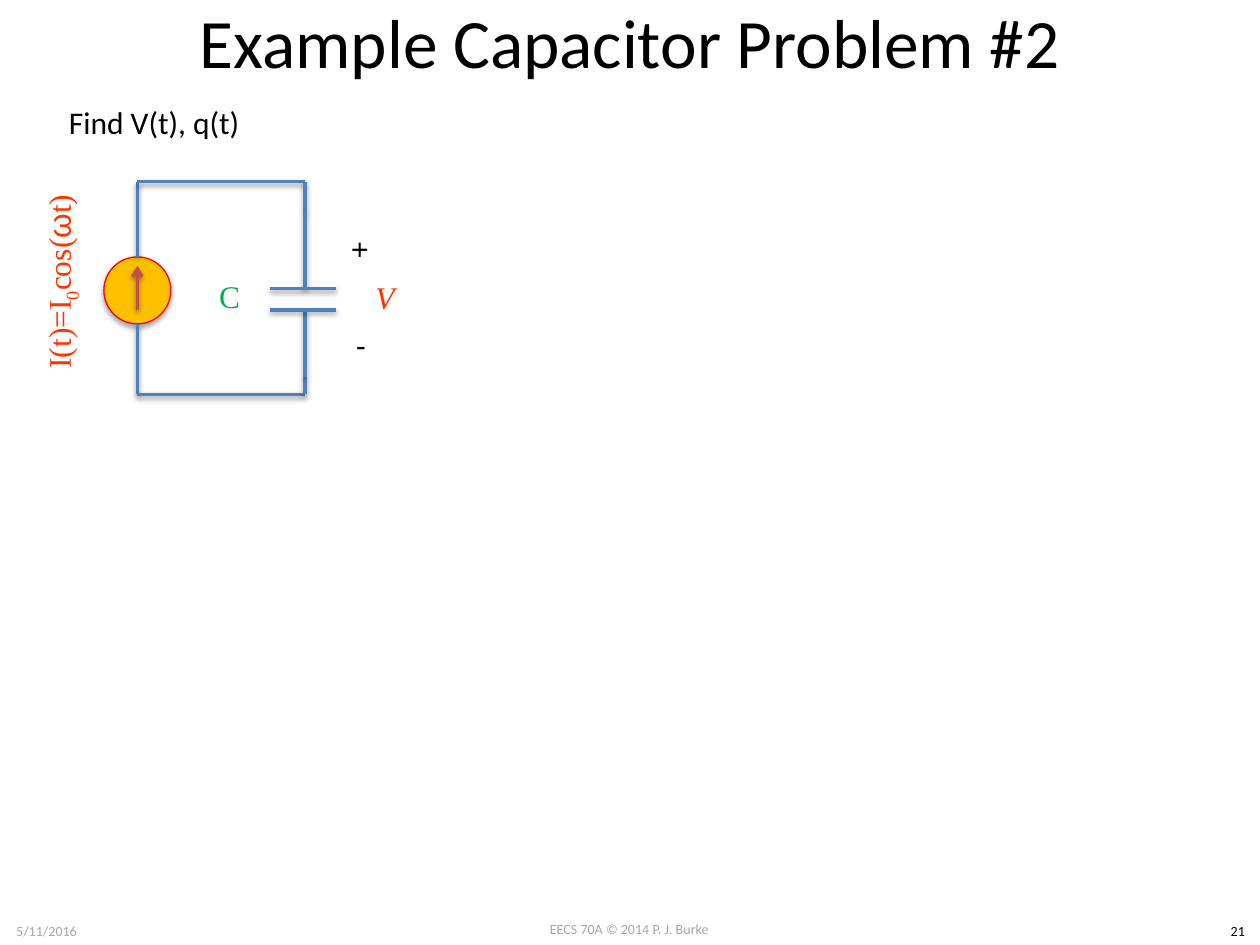
from lxml import etree
from pptx import Presentation
from pptx.dml.color import RGBColor
from pptx.enum.shapes import MSO_CONNECTOR, MSO_SHAPE
from pptx.enum.text import MSO_ANCHOR, PP_ALIGN
from pptx.oxml.ns import qn
from pptx.util import Cm, Pt

LEFT, CENTER = PP_ALIGN.LEFT, PP_ALIGN.CENTER
TOP, MIDDLE = MSO_ANCHOR.TOP, MSO_ANCHOR.MIDDLE
STRAIGHT, OVAL = MSO_CONNECTOR.STRAIGHT, MSO_SHAPE.OVAL

BLACK = RGBColor(0x00, 0x00, 0x00)
GRAY = RGBColor(0xA6, 0xA6, 0xA6)
BLUE = RGBColor(0x4F, 0x81, 0xBD)
BRICK = RGBColor(0xC0, 0x50, 0x4D)
RED = RGBColor(0xFF, 0x00, 0x00)
ORANGE = RGBColor(0xFF, 0x33, 0x00)
AMBER = RGBColor(0xFF, 0xC0, 0x00)
GREEN = RGBColor(0x00, 0xB0, 0x50)

SERIF = "Times New Roman"
FOOTER = dict(size=8, align=CENTER)
SYMBOL = dict(font=SERIF, align=CENTER, anchor=MIDDLE, wrap=True)

TEXTS = [
    ("EECS 70A © 2014 P. J. Burke", (9.73, 18.44, 5.92, 0.61), dict(FOOTER, color=GRAY)),
    ("5/11/2016", (0, 18.47, 1.88, 0.61), dict(FOOTER, color=GRAY)),
    ("21", (24.51, 18.47, 0.89, 0.61), FOOTER),
    ("Example Capacitor Problem #2", (1.27, 0, 22.86, 1.65),
     dict(size=39.6, align=CENTER, anchor=MIDDLE, wrap=True)),
    ("Find V(t), q(t)", (1.14, 1.96, 3.99, 1.02), {}),
    ("C", (3.12, 5.05, 3.02, 1.85), dict(SYMBOL, color=GREEN)),
    ("+", (6.88, 4.55, 0.84, 1.02), dict(rotation=90)),
    ("-", (6.93, 6.45, 0.71, 1.02), {}),
    ("V", (6.78, 5.21, 1.96, 1.55), dict(SYMBOL, color=ORANGE, italic=True)),
    (["I(t)=I", ("0", {"baseline": "-25000"}), "cos(", ("ω", {"font": "Arial"}), "t)"],
     (-1.45, 4.9, 5.36, 1.55), dict(SYMBOL, color=ORANGE, rotation=270)),
]

SOURCE_X, CAP_X = 2.77, 6.15
TOP_Y, BOTTOM_Y = 3.66, 7.95
SOURCE_Y, SOURCE_D = 5.18, 1.35
PLATE_YS, PLATE_LEFT, PLATE_RIGHT = (5.82, 6.25), 5.44, 6.78
LEAD_YS = (4.24, 7.59)

WIRES = [
    (SOURCE_X, SOURCE_Y, SOURCE_X, TOP_Y),
    (SOURCE_X, SOURCE_Y + SOURCE_D, SOURCE_X, BOTTOM_Y),
]
for rail_y, lead_y, plate_y in zip((TOP_Y, BOTTOM_Y), LEAD_YS, PLATE_YS):
    WIRES += [
        (SOURCE_X, rail_y, CAP_X, rail_y),
        (CAP_X, rail_y, CAP_X, lead_y),
        (CAP_X, lead_y, CAP_X, plate_y),
        (PLATE_RIGHT, plate_y, PLATE_LEFT, plate_y),
    ]


def add_shadow(s, distance, alpha):
    effects = etree.SubElement(s._element.spPr, qn("a:effectLst"))
    shadow = etree.SubElement(effects, qn("a:outerShdw"), blurRad=str(Pt(3.1)),
                              dist=str(Pt(distance)), dir="5400000", rotWithShape="0")
    color = etree.SubElement(shadow, qn("a:srgbClr"), val="000000")
    etree.SubElement(color, qn("a:alpha"), val=str(alpha * 1000))


def add_text(sp, text, box, size=18, font="Calibri", color=BLACK, italic=False,
             align=LEFT, anchor=TOP, wrap=False, rotation=0):
    s = sp.add_textbox(*map(Cm, box))
    s.rotation = rotation
    tf = s.text_frame
    tf.word_wrap = wrap
    tf.vertical_anchor = anchor
    p = tf.paragraphs[0]
    p.alignment = align
    for part in [text] if isinstance(text, str) else text:
        content, style = (part, {}) if isinstance(part, str) else part
        r = p.add_run()
        r.text = content
        r.font.size = Pt(size)
        r.font.name = style.get("font", font)
        r.font.italic = italic
        r.font.color.rgb = color
        if "baseline" in style:
            r._r.get_or_add_rPr().set("baseline", style["baseline"])


def add_line(sp, ends, color=BLUE, arrow=False):
    s = sp.add_connector(STRAIGHT, *map(Cm, ends))
    s.line.color.rgb = color
    s.line.width = Pt(2)
    if arrow:
        etree.SubElement(s.line._get_or_add_ln(), qn("a:tailEnd"), type="arrow")
    add_shadow(s, 1.6, 38)


def main():
    prs = Presentation()
    prs.slide_width, prs.slide_height = Cm(25.4), Cm(19.05)
    sp = prs.slides.add_slide(prs.slide_layouts[6]).shapes

    source = sp.add_shape(OVAL, Cm(SOURCE_X - SOURCE_D / 2), Cm(SOURCE_Y),
                          Cm(SOURCE_D), Cm(SOURCE_D))
    source.fill.solid()
    source.fill.fore_color.rgb = AMBER
    source.line.color.rgb = RED
    source.line.width = Pt(0.75)
    add_shadow(source, 1.8, 35)

    add_line(sp, (SOURCE_X, 6.25, SOURCE_X, 5.36), color=BRICK, arrow=True)
    for ends in WIRES:
        add_line(sp, ends)
    for text, box, style in TEXTS:
        add_text(sp, text, box, **style)

    prs.save("out.pptx")


if __name__ == "__main__":
    main()
